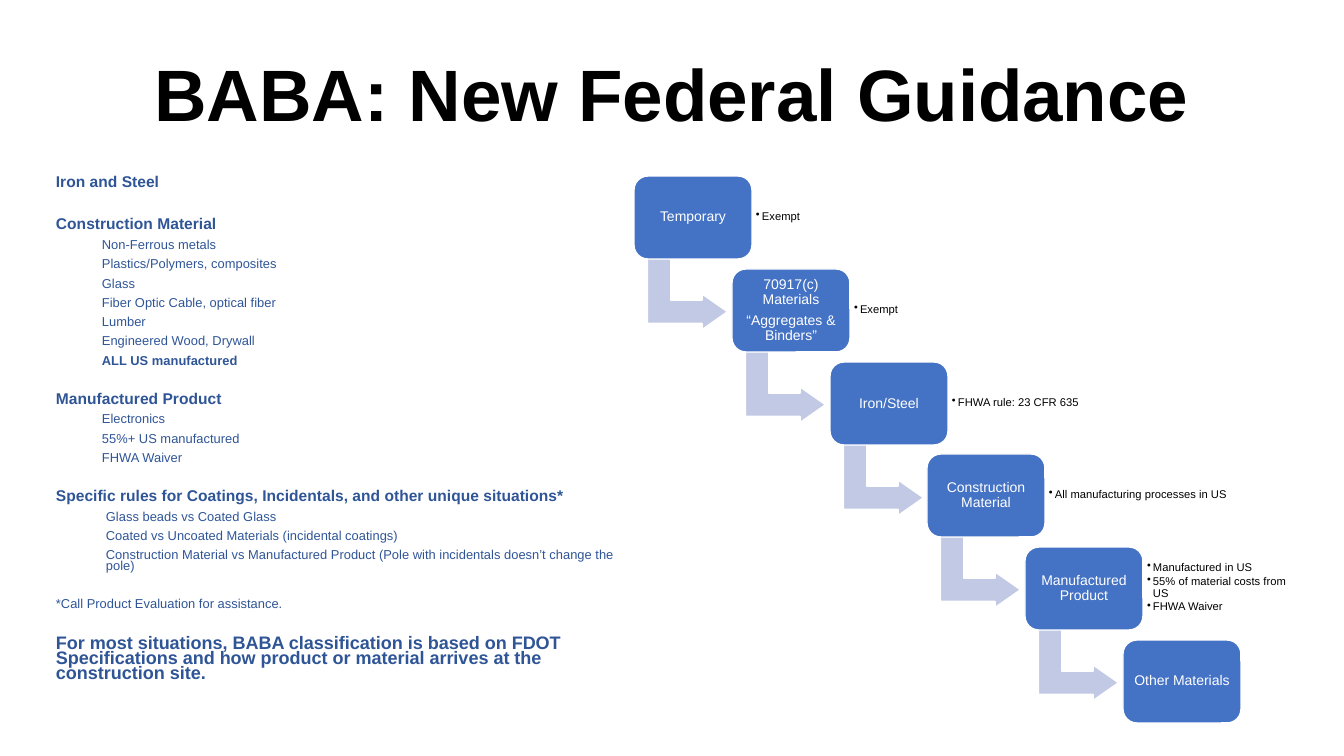
from pptx import Presentation
from pptx.dml.color import RGBColor
from pptx.enum.shapes import MSO_SHAPE
from pptx.enum.text import MSO_ANCHOR, PP_ALIGN
from pptx.util import Pt
from lxml import etree

SCALE = 914400 / 100.8
FONT = "Arial"
BLACK = RGBColor(0x00, 0x00, 0x00)
WHITE = RGBColor(0xFF, 0xFF, 0xFF)
NAVY = RGBColor(0x2F, 0x55, 0x97)
BLUE = RGBColor(0x44, 0x72, 0xC4)
PALE_BLUE = RGBColor(0xC1, 0xC9, 0xE4)
CENTER, LEFT = PP_ALIGN.CENTER, PP_ALIGN.LEFT
MIDDLE, TOP = MSO_ANCHOR.MIDDLE, MSO_ANCHOR.TOP
ROUNDED, BENT_ARROW = MSO_SHAPE.ROUNDED_RECTANGLE, MSO_SHAPE.BENT_UP_ARROW

HEADING = {"size": 11.1, "bold": True, "before": 13}
ITEM = {"size": 9.2, "indent": 46}
STRONG_ITEM = ITEM | {"bold": True}
RULE = ITEM | {"indent": 50}
NOTE = {"size": 9.2, "before": 13}
SUMMARY = {"size": 12.9, "bold": True, "before": 13}
TILE_LABEL = {"size": 10, "color": WHITE, "align": CENTER, "spacing": 0.9, "after": 3.5}
DETAIL = {"size": 8, "color": BLACK, "indent": 6, "bullet": "•", "spacing": 0.9, "after": 1.2}
TITLE = {"size": 52, "bold": True, "color": BLACK, "align": CENTER, "spacing": 0.9, "after": 0}

GUIDANCE = [
    ("Iron and Steel", HEADING | {"before": 0}),
    ("Construction Material", HEADING | {"before": 15}),
    ("Non-Ferrous metals", ITEM),
    ("Plastics/Polymers, composites", ITEM),
    ("Glass", ITEM),
    ("Fiber Optic Cable, optical fiber", ITEM),
    ("Lumber", ITEM),
    ("Engineered Wood, Drywall", ITEM),
    ("ALL US manufactured", STRONG_ITEM),
    ("Manufactured Product", HEADING),
    ("Electronics", ITEM),
    ("55%+ US manufactured", ITEM),
    ("FHWA Waiver", ITEM),
    ("Specific rules for Coatings, Incidentals, and other unique situations*", HEADING),
    ("Glass beads vs Coated Glass", RULE),
    ("Coated vs Uncoated Materials (incidental coatings)", RULE),
    ("Construction Material vs Manufactured Product "
     "(Pole with incidentals doesn’t change the pole)", RULE),
    ("*Call Product Evaluation for assistance.", NOTE),
    ("For most situations, BABA classification is based on FDOT Specifications "
     "and how product or material arrives at the construction site.", SUMMARY),
]

STEPS = [
    (["Temporary"], ["Exempt"], 86),
    (["70917(c) Materials", "“Aggregates & Binders”"], ["Exempt"], 86),
    (["Iron/Steel"], ["FHWA rule: 23 CFR 635"], 271),
    (["Construction Material"], ["All manufacturing processes in US"], 222),
    (["Manufactured Product"],
     ["Manufactured in US", "55% of material costs from US", "FHWA Waiver"], 153),
    (["Other Materials"], [], 0),
]


def px(length):
    return round(length * SCALE)


def write(frame, lines, anchor, inset=None):
    frame.word_wrap = True
    frame.vertical_anchor = anchor
    if inset is not None:
        for side in ("left", "top", "right", "bottom"):
            setattr(frame, f"margin_{side}", px(inset))
    for index, (text, style) in enumerate(lines):
        para = frame.add_paragraph() if index else frame.paragraphs[0]
        formats = {
            "alignment": style.get("align", LEFT),
            "line_spacing": style.get("spacing", 0.7),
            "space_before": Pt(style.get("before", 0)),
            "space_after": Pt(style.get("after", 6)),
        }
        for name, value in formats.items():
            setattr(para, name, value)
        if "indent" in style:
            para.level = 1
            properties = para._p.get_or_add_pPr()
            properties.set("marL", str(px(style["indent"])))
            hanging = -px(style["indent"]) if "bullet" in style else 0
            properties.set("indent", str(hanging))
            if "bullet" in style:
                namespace = properties.nsmap["a"]
                bullet = etree.SubElement(properties, f"{{{namespace}}}buChar")
                bullet.set("char", style["bullet"])
        span = para.add_run()
        span.text = text
        fonts = {"name": FONT, "size": Pt(style["size"]), "bold": style.get("bold", False)}
        for name, value in fonts.items():
            setattr(span.font, name, value)
        span.font.color.rgb = style.get("color", NAVY)


def add_text(page, box, lines, anchor, inset=None):
    shape = page.shapes.add_textbox(*map(px, box))
    write(shape.text_frame, lines, anchor, inset)


def add_block(page, kind, box, fill, adjustments):
    shape = page.shapes.add_shape(kind, *map(px, box))
    shape.shadow.inherit = False
    shape.fill.solid()
    shape.fill.fore_color.rgb = fill
    shape.line.color.rgb = WHITE
    shape.line.width = Pt(1)
    for index, value in enumerate(adjustments):
        shape.adjustments[index] = value
    return shape


def add_staircase(page, box):
    left, top, width, height = box
    tile_width, tile_height = 118, 83
    last = len(STEPS) - 1
    for index, (labels, details, detail_width) in enumerate(STEPS):
        x = left + round(index * (width - tile_width) / last)
        y = top + round(index * (height - tile_height) / last)
        if index < last:
            arrow = add_block(page, BENT_ARROW, (x + 18, y + 78, 71, 80),
                              PALE_BLUE, (0.328, 0.25, 0.358))
            arrow.rotation = 90
        tile = add_block(page, ROUNDED, (x, y, tile_width, tile_height), BLUE, (0.167,))
        write(tile.text_frame, [(label, TILE_LABEL) for label in labels], MIDDLE, 4)
        if details:
            add_text(page, (x + tile_width, y + 7, detail_width, 67),
                     [(detail, DETAIL) for detail in details], MIDDLE, 4)


def main():
    deck = Presentation()
    deck.slide_width, deck.slide_height = px(1344), px(756)
    page = deck.slides.add_slide(deck.slide_layouts[6])
    page.background.fill.solid()
    page.background.fill.fore_color.rgb = WHITE
    add_text(page, (92, 35, 1159, 125), [("BABA: New Federal Guidance", TITLE)], MIDDLE)
    add_text(page, (46, 172, 592, 548), GUIDANCE, TOP)
    add_staircase(page, (634, 176, 607, 547))
    deck.save("out.pptx")


if __name__ == "__main__":
    main()
